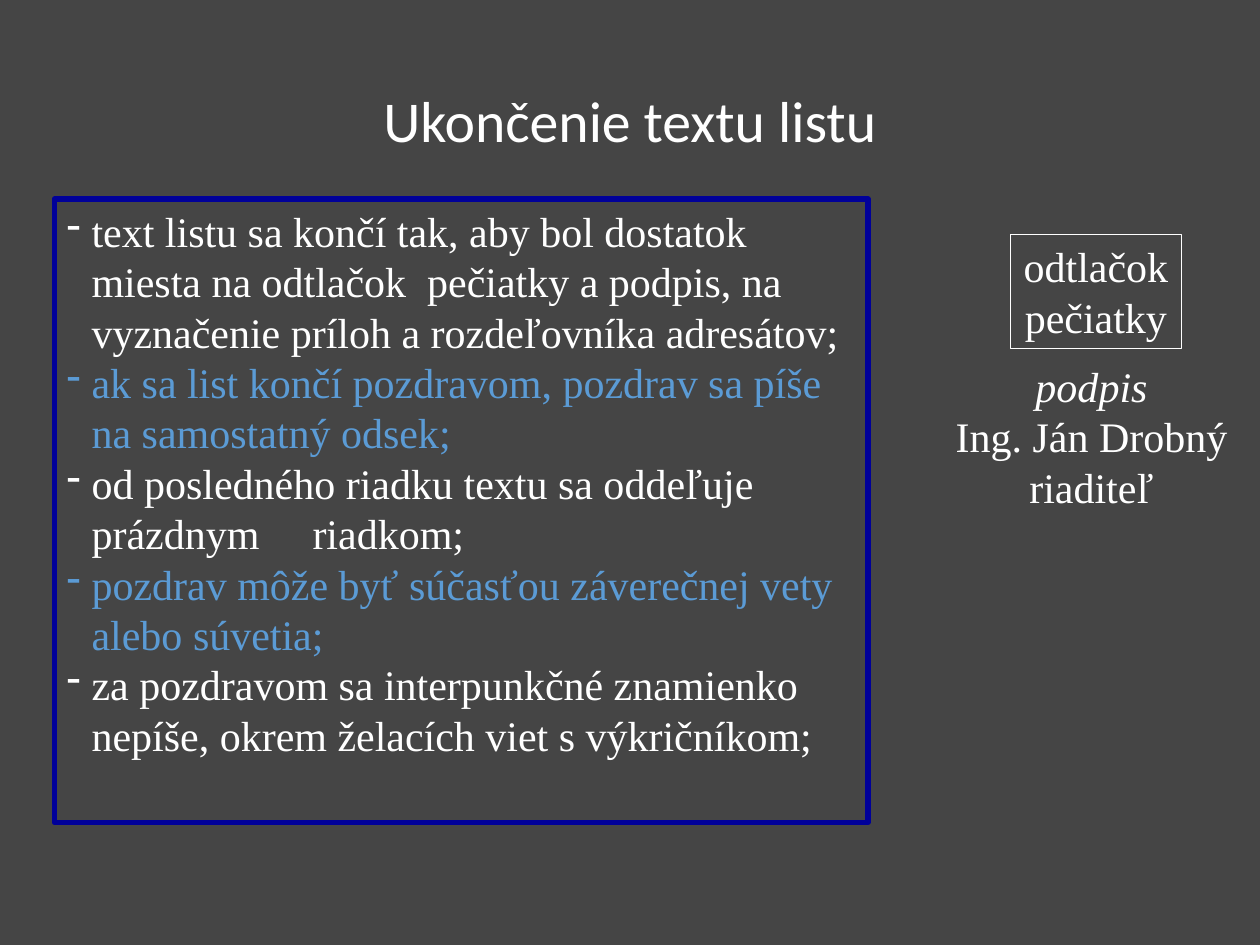
from lxml.etree import SubElement
from pptx import Presentation
from pptx.dml.color import RGBColor as Color
from pptx.enum.shapes import MSO_SHAPE as Shape
from pptx.enum.text import MSO_ANCHOR as Anchor, PP_ALIGN as Align
from pptx.oxml.ns import qn
from pptx.util import Pt

THEME = {
    "background": "454545",
    "text": "FFFFFF",
    "accent": "5B9BD5",
    "frame": "000099",
    "title_font": "Calibri",
    "body_font": "Times New Roman",
    "title_size": 33,
    "body_size": 24,
}

TITLE = "Ukončenie textu listu"
RULES = [
    "text listu sa končí tak, aby bol dostatok miesta na odtlačok  pečiatky a podpis, "
    "na vyznačenie príloh a rozdeľovníka adresátov;",
    "ak sa list končí pozdravom, pozdrav sa píše na samostatný odsek;",
    "od posledného riadku textu sa oddeľuje prázdnym\triadkom;",
    "pozdrav môže byť súčasťou záverečnej vety alebo súvetia;",
    "za pozdravom sa interpunkčné znamienko nepíše, okrem želacích viet s výkričníkom;",
]
SIGNATURE = ["podpis", "Ing. Ján Drobný", "riaditeľ"]
STAMP = ["odtlačok", "pečiatky"]

# left, top, width, height
TITLE_AREA = (49.5, 18.75, 621, 104.25)
RULES_AREA = (31, 113.75, 465, 356.25)
SIGNATURE_AREA = (538, 202.5, 171.5, 94.5)
STAMP_AREA = (577.5, 134, 97.5, 65.25)
BULLET_INDENT = 14.25
TAB_STOP = 140.5


def add_box(slide, area, line=None, line_width=0.75):
    """Add an unfilled rectangle when a line colour is given, else a text box."""
    place = [Pt(length) for length in area]
    if line is None:
        return slide.shapes.add_textbox(*place)
    box = slide.shapes.add_shape(Shape.RECTANGLE, *place)
    box.shadow.inherit = False
    box.fill.background()
    box.line.color.rgb = Color.from_string(line)
    box.line.width = Pt(line_width)
    return box


def write(box, lines, font="body_font", size="body_size", colors=("text",),
          align=Align.CENTER, anchor=Anchor.TOP, wrap=False, italic_lines=(), spacing=None):
    """Write one paragraph per line, taking the colours in turn."""
    frame = box.text_frame
    frame.word_wrap = wrap
    frame.vertical_anchor = anchor
    for index, line in enumerate(lines):
        para = frame.paragraphs[0] if index == 0 else frame.add_paragraph()
        para.alignment = align
        para.line_spacing = spacing
        span = para.add_run()
        span.text = line
        span.font.name = THEME[font]
        span.font.size = Pt(THEME[size])
        span.font.italic = index in italic_lines
        span.font.color.rgb = Color.from_string(THEME[colors[index % len(colors)]])


def add_dash(para):
    """Give a paragraph a hanging dash and a tab stop."""
    properties = para._p.get_or_add_pPr()
    properties.set("marL", str(Pt(BULLET_INDENT)))
    properties.set("indent", str(-Pt(BULLET_INDENT)))
    SubElement(properties, qn("a:buChar"), char="-")
    tabs = SubElement(properties, qn("a:tabLst"))
    SubElement(tabs, qn("a:tab"), pos=str(Pt(TAB_STOP)), algn="l")


def main():
    deck = Presentation()
    deck.slide_width, deck.slide_height = Pt(720), Pt(540)
    page = deck.slides.add_slide(deck.slide_layouts[6])
    page.background.fill.solid()
    page.background.fill.fore_color.rgb = Color.from_string(THEME["background"])

    write(add_box(page, TITLE_AREA), [TITLE], font="title_font", size="title_size",
          anchor=Anchor.MIDDLE, wrap=True, spacing=0.9)

    rules = add_box(page, RULES_AREA, line=THEME["frame"], line_width=3)
    write(rules, RULES, colors=("text", "accent"), align=Align.LEFT, wrap=True)
    for para in rules.text_frame.paragraphs:
        add_dash(para)

    write(add_box(page, SIGNATURE_AREA), SIGNATURE, italic_lines=(0,))
    write(add_box(page, STAMP_AREA, line=THEME["text"]), STAMP)
    deck.save("out.pptx")


if __name__ == "__main__":
    main()
